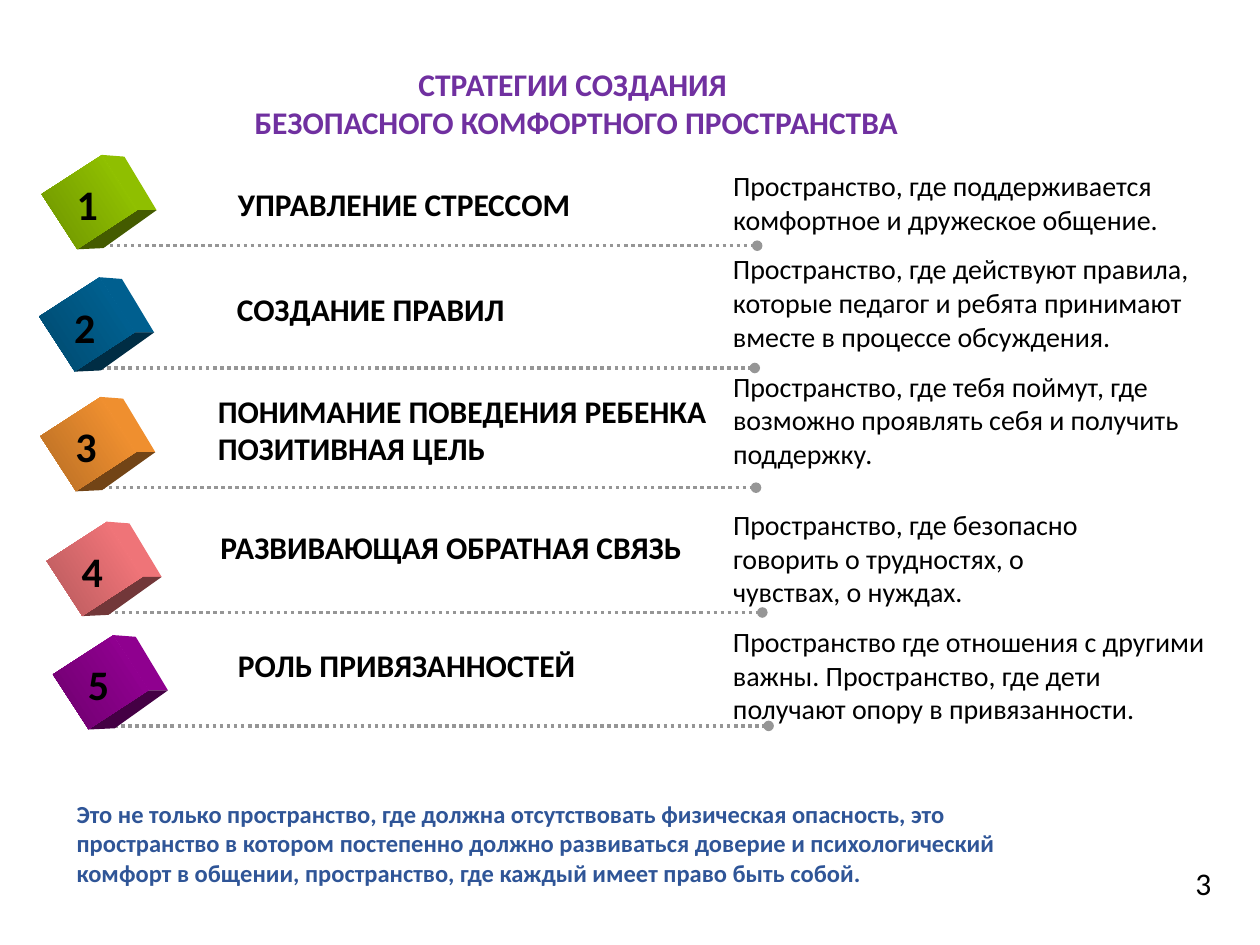
from lxml import etree
from pptx import Presentation
from pptx import util as u
from pptx.dml.color import RGBColor
from pptx.enum import dml, shapes, text
from pptx.oxml.ns import qn

COLORS = {
    "text": "000000",
    "title": "7030A0",
    "summary": "2F5597",
    "rule": "969696",
}

CUBE_WIDTH, CUBE_HEIGHT, CUBE_TURN = 37.4, 41, 57
# Sides of a cube, as points around the centre of its front face
RIGHT_SIDE = [(7, -27), (20, -26), (38.4, 4.6), (27.4, 4.6)]
BOTTOM_SIDE = [(-7, 27), (27.4, 4.6), (38.4, 4.6), (8, 26.3)]
RULE_LENGTH = 378
MEANING_LEFT = 411.8

# cube (left, top, light, dark), heading (left, top, width, lines),
# meaning (top, width, wording)
STRATEGIES = [
    ((32.4, 95, "99CC00", "6D9200"),
     (128.9, 102.2, 206.6, ["УПРАВЛЕНИЕ СТРЕССОМ"]),
     (92.9, 286.6, "Пространство, где поддерживается комфортное и дружеское общение.")),
    ((31, 164.9, "006699", "00496D"),
     (128.2, 162, 200.9, ["СОЗДАНИЕ ПРАВИЛ"]),
     (140.4, 292.3, "Пространство, где действуют правила, которые педагог и ребята "
                    "принимают вместе в процессе обсуждения.")),
    ((31.7, 233.3, "FF9933", "B66D24"),
     (117.4, 220.3, 321.8, ["ПОНИМАНИЕ ПОВЕДЕНИЯ РЕБЕНКА", "ПОЗИТИВНАЯ ЦЕЛЬ"]),
     (207.4, 280.1, "Пространство, где тебя поймут, где возможно проявлять "
                    "себя и получить поддержку.")),
    ((35.3, 304.6, "FF7C80", "B6595C"),
     (118.8, 298.1, 280.8, ["РАЗВИВАЮЩАЯ ОБРАТНАЯ СВЯЗЬ"]),
     (286.6, 244.1, "Пространство, где безопасно говорить о трудностях, "
                    "о чувствах, о нуждах.")),
    ((38.9, 369.4, "990099", "6D006D"),
     (128.9, 365.8, 209.5, ["РОЛЬ ПРИВЯЗАННОСТЕЙ"]),
     (353.5, 292.3, "Пространство где отношения с другими важны. Пространство, "
                    "где дети получают опору в привязанности.")),
]


def rgb(color):
    return RGBColor.from_string(COLORS.get(color, color))


def shade(color, factor):
    """Darken a hex colour by a factor from 0 to 1."""
    return "".join(f"{int(int(color[i:i + 2], 16) * factor):02X}" for i in (0, 2, 4))


class SlideBuilder:
    """Holds the font and the slide on which elements are placed."""

    def __init__(self, slide, font="Calibri"):
        self.slide = slide
        self.font = font

    def add_text(self, left, top, width, height, lines, *, size=18, bold=False,
                 color="text", align=text.PP_ALIGN.LEFT, wrap=True, parent=None):
        target = parent or self.slide
        box = target.shapes.add_textbox(u.Pt(left), u.Pt(top), u.Pt(width), u.Pt(height))
        frame = box.text_frame
        frame.word_wrap = wrap
        frame.auto_size = text.MSO_AUTO_SIZE.SHAPE_TO_FIT_TEXT
        frame.text = "\n".join(lines)
        for paragraph in frame.paragraphs:
            paragraph.alignment = align
            for run in paragraph.runs:
                run.font.name = self.font
                run.font.size = u.Pt(size)
                run.font.bold = bold
                run.font.color.rgb = rgb(color)

    def add_dotted_rule(self, left, top, length, group):
        """Dotted line that ends in a round dot."""
        rule = group.shapes.add_connector(
            shapes.MSO_CONNECTOR.STRAIGHT,
            u.Pt(left), u.Pt(top), u.Pt(left + length), u.Pt(top))
        rule.line.color.rgb = rgb("rule")
        rule.line.width = u.Pt(2)
        rule.line.dash_style = dml.MSO_LINE.ROUND_DOT
        properties = rule._element.spPr
        etree.SubElement(properties.find(qn("a:ln")), qn("a:tailEnd"), type="oval")
        etree.SubElement(properties, qn("a:effectLst"))

    def add_cube_side(self, center, corners, color, group):
        points = [(u.Pt(center[0] + x), u.Pt(center[1] + y)) for x, y in corners]
        outline = group.shapes.build_freeform(*points[0])
        outline.add_line_segments(points[1:], close=True)
        side = outline.convert_to_shape()
        side.shadow.inherit = False
        side.fill.solid()
        side.fill.fore_color.rgb = rgb(color)
        side.line.fill.background()

    def add_cube(self, left, top, light, dark, group):
        center = left + CUBE_WIDTH / 2, top + CUBE_HEIGHT / 2
        self.add_cube_side(center, RIGHT_SIDE, shade(light, 0.94), group)
        self.add_cube_side(center, BOTTOM_SIDE, shade(light, 0.45), group)
        face = group.shapes.add_shape(
            shapes.MSO_SHAPE.RECTANGLE,
            u.Pt(left), u.Pt(top), u.Pt(CUBE_WIDTH), u.Pt(CUBE_HEIGHT))
        face.rotation = CUBE_TURN
        face.shadow.inherit = False
        face.line.fill.background()
        face.fill.gradient()
        face.fill.gradient_angle = 270
        for stop, color in zip(face.fill.gradient_stops, (light, dark)):
            stop.color.rgb = rgb(color)

    def add_marker(self, number, left, top, light, dark):
        """Cube with its number and the dotted rule below it."""
        group = self.slide.shapes.add_group_shape()
        self.add_dotted_rule(left + 22.3, top + 45.4, RULE_LENGTH, group)
        self.add_cube(left, top, light, dark, group)
        self.add_text(left + 4.3, top + 3.6, 26.6, 36.7, [str(number)],
                      size=24, bold=True, wrap=False, parent=group)


def main():
    deck = Presentation()
    deck.slide_width, deck.slide_height = u.Pt(720), u.Pt(540)
    page = SlideBuilder(deck.slides.add_slide(deck.slide_layouts[6]))

    page.add_text(128.9, 33.8, 401, 51,
                  ["СТРАТЕГИИ СОЗДАНИЯ ", "БЕЗОПАСНОГО КОМФОРТНОГО ПРОСТРАНСТВА"],
                  bold=True, color="title", align=text.PP_ALIGN.CENTER)

    for number, (marker, heading, meaning) in enumerate(STRATEGIES, 1):
        page.add_marker(number, *marker)
        left, top, width, lines = heading
        page.add_text(left, top, width, 7.2 + 21.8 * len(lines), lines, bold=True)
        top, width, wording = meaning
        page.add_text(MEANING_LEFT, top, width, 65.5, [wording], size=16)

    page.add_text(36.7, 452.9, 549.4, 58.3,
                  ["Это не только пространство, где должна отсутствовать физическая "
                   "опасность, это пространство в котором постепенно должно развиваться "
                   "доверие и психологический комфорт в общении, пространство, где "
                   "каждый имеет право быть собой."],
                  size=14, bold=True, color="summary")
    page.add_text(676, 490.3, 23.8, 28.8, ["3"])

    deck.save("out.pptx")


if __name__ == "__main__":
    main()
